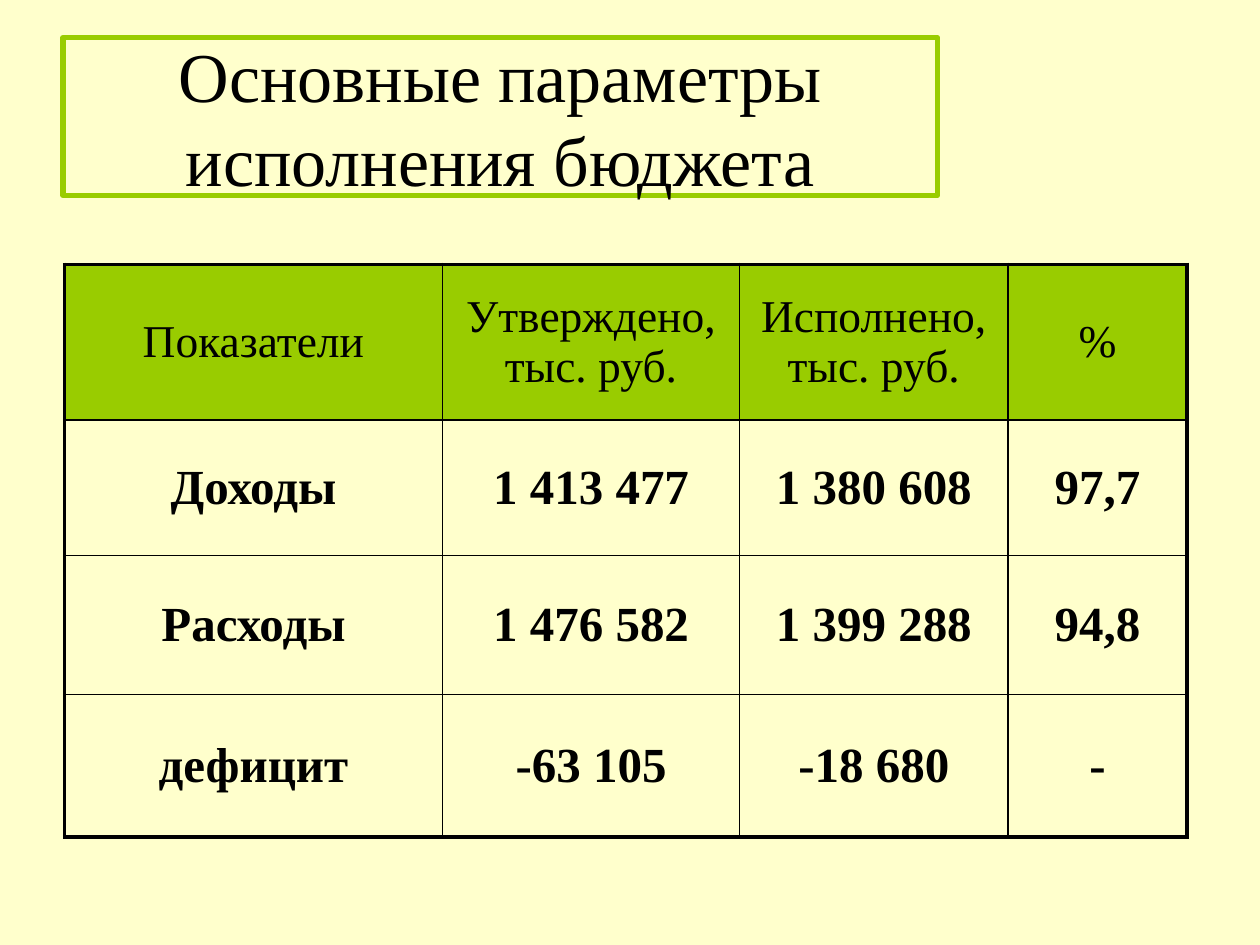
from dataclasses import dataclass
from lxml.etree import SubElement as Sub
from pptx import Presentation
from pptx.dml.color import RGBColor as Rgb
from pptx.enum.shapes import MSO_SHAPE as Form
from pptx.enum.text import MSO_ANCHOR as Anchor, PP_ALIGN as Align
from pptx.oxml.ns import qn
from pptx.util import Cm, Pt

TITLE = "Основные параметры исполнения бюджета"
ROWS = [
    ("Показатели", "Утверждено, тыс. руб.", "Исполнено, тыс. руб.", "%"),
    ("Доходы", "1 413 477", "1 380 608", "97,7"),
    ("Расходы", "1 476 582", "1 399 288", "94,8"),
    ("дефицит", "-63 105", "-18 680", "-"),
]
WIDTHS = (7.62, 5.99, 5.41, 3.61)
HEIGHTS = (3.14, 2.73, 2.8, 2.87)


@dataclass(frozen=True)
class Theme:
    font: str = "Times New Roman"
    back: str = "FFFFCC"
    green: str = "99CC00"
    ink: str = "000000"
    title: float = 40
    head: float = 26
    body: float = 28
    frame: float = 3
    outer: float = 2.25
    inner: float = 1


LOOK = Theme()


def color(code):
    return Rgb.from_string(code)


def write(frame, text, size, bold=False):
    frame.text = text
    para = frame.paragraphs[0]
    para.alignment = Align.CENTER
    font = para.runs[0].font
    font.name, font.size, font.bold = LOOK.font, Pt(size), bold
    font.color.rgb = color(LOOK.ink)


def border(cell, row, col):
    edges = {
        "L": col == 0,
        "R": col == len(WIDTHS) - 1,
        "T": row == 0,
        "B": row == len(HEIGHTS) - 1,
    }
    props = cell._tc.get_or_add_tcPr()
    for side, rim in edges.items():
        width = Pt(LOOK.outer if rim else LOOK.inner)
        line = Sub(props, qn("a:ln" + side), w=str(width))
        fill = Sub(line, qn("a:solidFill"))
        Sub(fill, qn("a:srgbClr"), val=LOOK.ink)


def add_title(slide):
    box = slide.shapes.add_shape(
        Form.RECTANGLE, Cm(1.27), Cm(0.76), Cm(17.63), Cm(3.18))
    box.shadow.inherit = False
    box.fill.background()
    box.line.color.rgb = color(LOOK.green)
    box.line.width = Pt(LOOK.frame)
    frame = box.text_frame
    frame.word_wrap = True
    frame.vertical_anchor = Anchor.MIDDLE
    write(frame, TITLE, LOOK.title)


def add_grid(slide):
    grid = slide.shapes.add_table(
        len(ROWS), len(WIDTHS), Cm(1.3), Cm(5.33),
        Cm(sum(WIDTHS)), Cm(sum(HEIGHTS))).table
    grid.first_row = grid.horz_banding = False
    for col, width in zip(grid.columns, WIDTHS):
        col.width = Cm(width)
    for row, height in zip(grid.rows, HEIGHTS):
        row.height = Cm(height)
    for r, texts in enumerate(ROWS):
        for c, text in enumerate(texts):
            cell = grid.cell(r, c)
            cell.vertical_anchor = Anchor.MIDDLE
            border(cell, r, c)
            if r == 0:
                cell.fill.solid()
                cell.fill.fore_color.rgb = color(LOOK.green)
            else:
                cell.fill.background()
            write(cell.text_frame, text, LOOK.body if r else LOOK.head, r > 0)


def main():
    """Build the budget execution slide."""
    deck = Presentation()
    deck.slide_width, deck.slide_height = Cm(25.4), Cm(19.05)
    slide = deck.slides.add_slide(deck.slide_layouts[6])
    fill = slide.background.fill
    fill.solid()
    fill.fore_color.rgb = color(LOOK.back)
    add_title(slide)
    add_grid(slide)
    deck.save("out.pptx")


if __name__ == "__main__":
    main()
